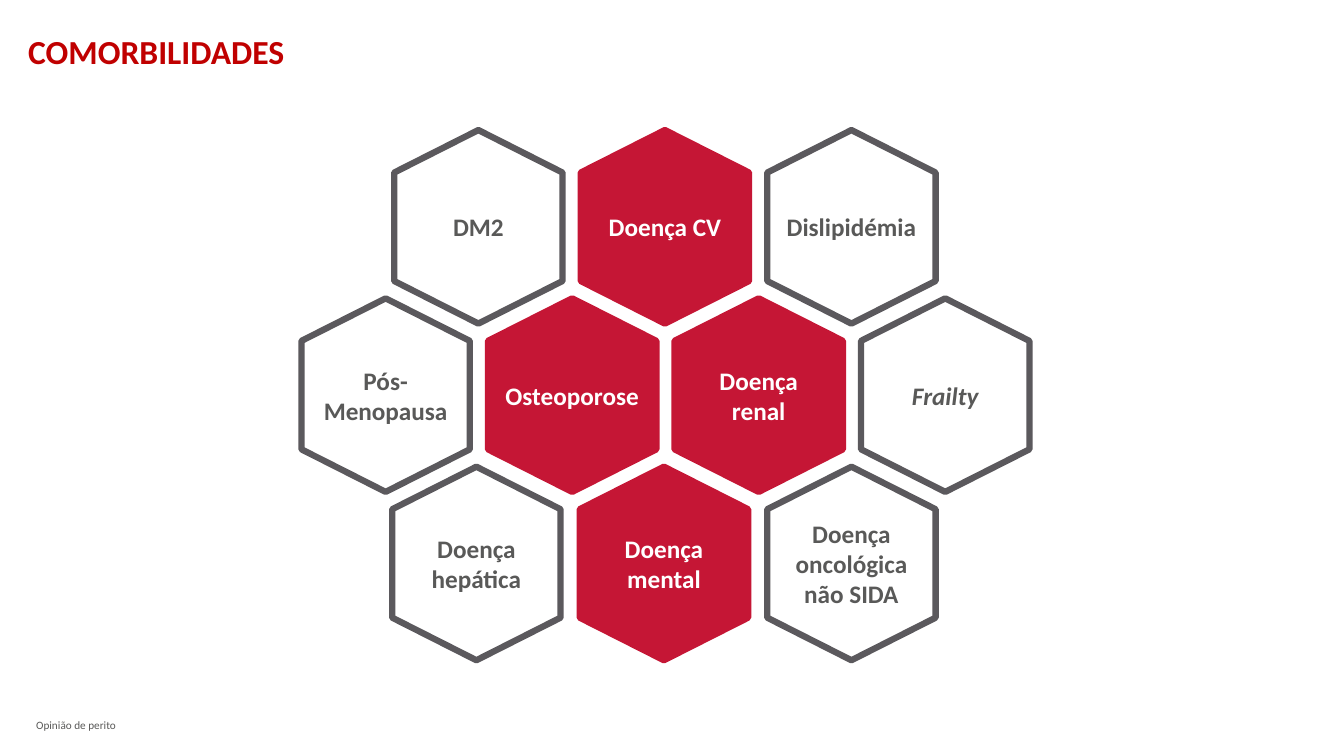
"""Build the comorbidities slide as a honeycomb of hexagons."""
from lxml import etree
from pptx import Presentation
from pptx import util as u
from pptx.dml.color import RGBColor
from pptx.enum import text
from pptx.oxml import ns

RED = RGBColor(0xC5, 0x16, 0x35)
TITLE_RED = RGBColor(0xC0, 0x00, 0x00)
OUTLINE_GREY = RGBColor(0x5B, 0x59, 0x5D)
TEXT_GREY = RGBColor(0x59, 0x59, 0x58)
WHITE = RGBColor(0xFF, 0xFF, 0xFF)

TITLE = "COMORBILIDADES"
SOURCE = "Opinião de perito"
HONEYCOMB = [
    {"left": 3.91, "pitch": 1.85,
     "labels": ["DM2", "Doença CV", "Dislipidémia"]},
    {"left": 2.99, "pitch": 1.85,
     "labels": ["Pós-Menopausa", "Osteoporose", "Doença renal", "Frailty"]},
    {"left": 3.89, "pitch": 1.86,
     "labels": ["Doença hepática", "Doença mental", "Doença oncológica não SIDA"]},
]
HIGHLIGHTED = {"Doença CV", "Osteoporose", "Doença renal", "Doença mental"}
ITALIC = {"Frailty"}
SIDE_INSETS = {"Dislipidémia": 0.12, "Osteoporose": 0.12, "Pós-Menopausa": 0.2}

SLIDE_WIDTH, SLIDE_HEIGHT = 13.33, 7.5
HEX_WIDTH, HEX_HEIGHT = 1.67, 1.92
FIRST_TOP, ROW_PITCH = 1.29, 1.67
HEX_CORNERS = [(0.5, 0), (1, 0.22), (1, 0.78), (0.5, 1), (0, 0.78), (0, 0.22)]


def set_values(target, values):
    for name, value in values.items():
        setattr(target, name, value)


def write(shape, words, size, color, frame_format, bold=False, italic=False,
          align=text.PP_ALIGN.LEFT):
    frame = shape.text_frame
    set_values(frame, {"word_wrap": True, **frame_format})
    paragraph = frame.paragraphs[0]
    paragraph.alignment = align
    run = paragraph.add_run()
    run.text = words
    set_values(run.font, {"name": "Calibri", "size": u.Pt(size),
                          "bold": bold, "italic": italic})
    run.font.color.rgb = color


def add_hexagon(slide, label, left, top):
    corners = [(u.Inches(left + x * HEX_WIDTH), u.Inches(top + y * HEX_HEIGHT))
               for x, y in HEX_CORNERS]
    builder = slide.shapes.build_freeform(*corners[0])
    builder.add_line_segments(corners[1:], close=True)
    hexagon = builder.convert_to_shape()
    hexagon.shadow.inherit = False

    highlighted = label in HIGHLIGHTED
    hexagon.fill.solid()
    hexagon.fill.fore_color.rgb = RED if highlighted else WHITE
    hexagon.line.color.rgb = RED if highlighted else OUTLINE_GREY
    hexagon.line.width = u.Pt(4.5)
    outline = hexagon.element.spPr.find(ns.qn("a:ln"))
    etree.SubElement(outline, ns.qn("a:round"))

    side = u.Inches(SIDE_INSETS.get(label, 0.26))
    frame_format = {"margin_left": side, "margin_right": side,
                    "margin_top": u.Inches(0.3), "margin_bottom": u.Inches(0.3),
                    "vertical_anchor": text.MSO_ANCHOR.MIDDLE}
    write(hexagon, label, 18, WHITE if highlighted else TEXT_GREY, frame_format,
          bold=True, italic=label in ITALIC, align=text.PP_ALIGN.CENTER)


def main():
    presentation = Presentation()
    set_values(presentation, {"slide_width": u.Inches(SLIDE_WIDTH),
                              "slide_height": u.Inches(SLIDE_HEIGHT)})
    slide = presentation.slides.add_slide(presentation.slide_layouts[5])

    title = slide.shapes.title
    set_values(title, {"left": u.Inches(0.18), "top": u.Inches(0.26),
                       "width": u.Inches(8.93), "height": u.Inches(0.5)})
    write(title, TITLE, 24, TITLE_RED,
          {"vertical_anchor": text.MSO_ANCHOR.MIDDLE}, bold=True)

    for row, line in enumerate(HONEYCOMB):
        for column, label in enumerate(line["labels"]):
            add_hexagon(slide, label, line["left"] + column * line["pitch"],
                        FIRST_TOP + row * ROW_PITCH)

    source = slide.shapes.add_textbox(u.Inches(0.26), u.Inches(7.08),
                                      u.Inches(2.22), u.Inches(0.24))
    write(source, SOURCE, 8, TEXT_GREY, {})

    presentation.save("out.pptx")


if __name__ == "__main__":
    main()
